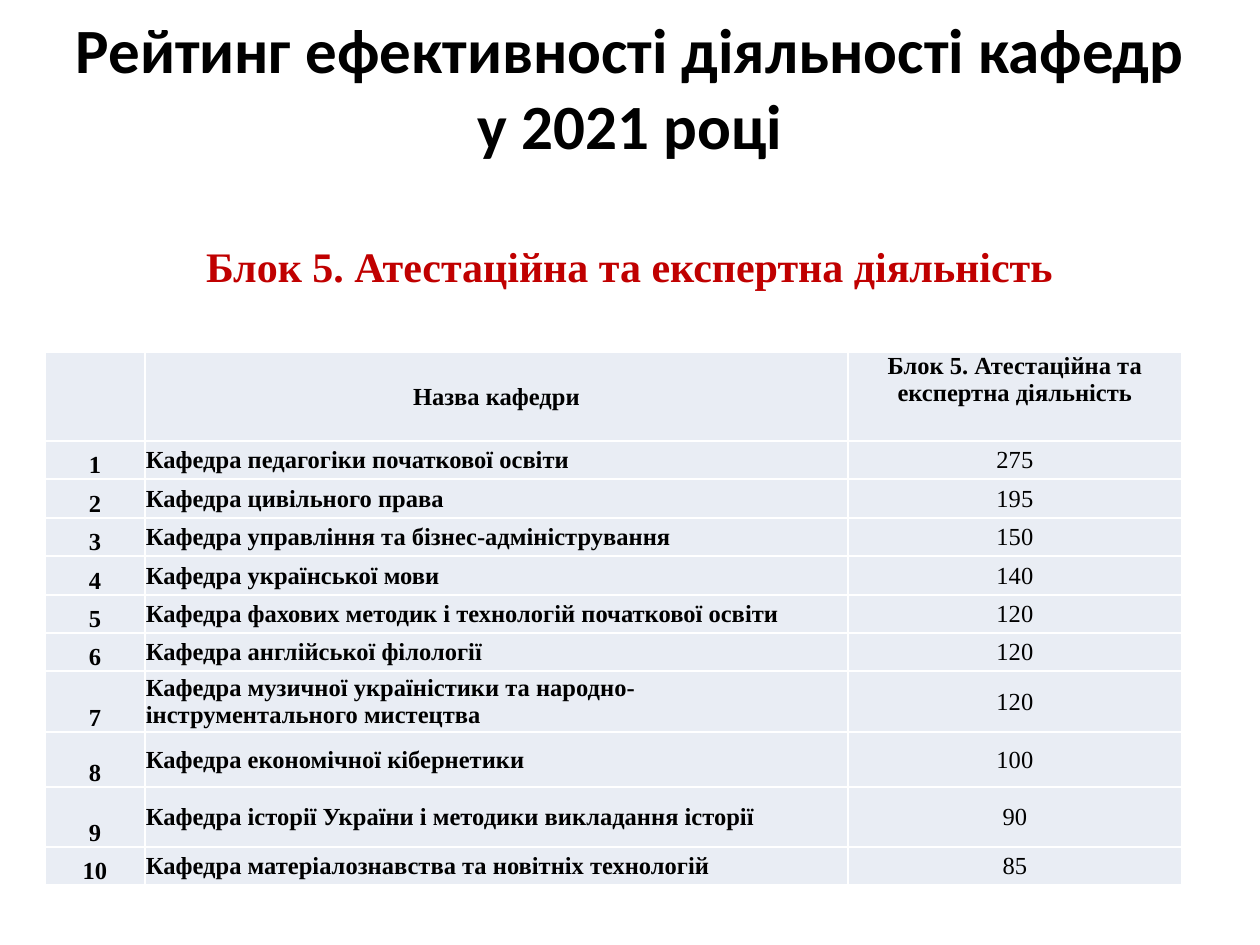
import pptx
import pptx.util
import pptx.dml.color
import pptx.enum.text
import pptx.oxml
import pptx.oxml.ns

RGBColor = pptx.dml.color.RGBColor
ALIGN = pptx.enum.text.PP_ALIGN
ANCHOR = pptx.enum.text.MSO_ANCHOR

BLACK = RGBColor(0x00, 0x00, 0x00)
RED = RGBColor(0xC0, 0x00, 0x00)
CELL_FILL = RGBColor(0xE9, 0xED, 0xF4)
BORDER = RGBColor(0xFF, 0xFF, 0xFF)
SERIF = "Times New Roman"

# Content
TITLE = "Рейтинг ефективності діяльності кафедр у 2021 році"
BLOCK = "Блок 5. Атестаційна та експертна діяльність"
HEADER = ("", "Назва кафедри", BLOCK)
DEPARTMENTS = [
    ("Кафедра педагогіки початкової освіти", 275),
    ("Кафедра цивільного права", 195),
    ("Кафедра управління та бізнес-адміністрування", 150),
    ("Кафедра української мови", 140),
    ("Кафедра фахових методик і технологій початкової освіти", 120),
    ("Кафедра англійської філології", 120),
    ("Кафедра музичної україністики та народно-інструментального мистецтва", 120),
    ("Кафедра економічної кібернетики", 100),
    ("Кафедра історії України і методики викладання історії", 90),
    ("Кафедра матеріалознавства та новітніх технологій", 85),
]

# Layout in px, 126 px to the inch
COL_WIDTHS = (100, 703, 334)
ROW_HEIGHTS = (89, 38, 39, 38, 39, 38, 38, 61, 55, 60, 38)
# Alignment, anchor and bold of each column
HEADER_STYLES = [(ALIGN.CENTER, ANCHOR.MIDDLE, True),
                 (ALIGN.CENTER, ANCHOR.MIDDLE, True),
                 (ALIGN.CENTER, ANCHOR.TOP, True)]
BODY_STYLES = [(ALIGN.CENTER, ANCHOR.BOTTOM, True),
               (ALIGN.LEFT, ANCHOR.MIDDLE, True),
               (ALIGN.CENTER, ANCHOR.MIDDLE, False)]


def px(n):
    return pptx.util.Emu(round(n * 914400 / 126))


def write(tf, text, align, size, font, color, bold):
    p = tf.paragraphs[0]
    p.alignment = align
    r = p.add_run()
    r.text = text
    r.font.size = pptx.util.Pt(size)
    r.font.name = font
    r.font.bold = bold
    r.font.color.rgb = color


def add_text(slide, box, text, size, font, color, wrap):
    tf = slide.shapes.add_textbox(*map(px, box)).text_frame
    tf.word_wrap = wrap
    write(tf, text, ALIGN.CENTER, size, font, color, True)
    return tf


def add_borders(cell):
    tcPr = cell._tc.get_or_add_tcPr()
    for i, side in enumerate("LRTB"):
        tcPr.insert(i, pptx.oxml.parse_xml(
            f'<a:ln{side} {pptx.oxml.ns.nsdecls("a")} w="12700"><a:solidFill>'
            f'<a:srgbClr val="{BORDER}"/></a:solidFill></a:ln{side}>'))


def fill_cell(cell, text, style):
    align, anchor, bold = style
    cell.fill.solid()
    cell.fill.fore_color.rgb = CELL_FILL
    add_borders(cell)
    cell.margin_left = cell.margin_right = cell.margin_top = px(1)
    cell.margin_bottom = 0
    cell.vertical_anchor = anchor
    if text:
        write(cell.text_frame, text, align, 14, SERIF, BLACK, bold)


def main():
    prs = pptx.Presentation()
    prs.slide_width, prs.slide_height = px(1260), px(945)
    slide = prs.slides.add_slide(prs.slide_layouts[6])

    # Title and block heading
    tf = add_text(slide, (63, 38, 1134, 97), TITLE, 36, "Calibri", BLACK, True)
    tf.vertical_anchor = ANCHOR.MIDDLE
    tf = add_text(slide, (189, 234, 881, 63), BLOCK, 24, SERIF, RED, False)
    tf.auto_size = pptx.enum.text.MSO_AUTO_SIZE.SHAPE_TO_FIT_TEXT

    # Rating table
    rows = [HEADER] + [(str(n), name, str(score))
                       for n, (name, score) in enumerate(DEPARTMENTS, 1)]
    table = slide.shapes.add_table(
        len(rows), len(COL_WIDTHS), px(45), px(352),
        px(sum(COL_WIDTHS)), px(sum(ROW_HEIGHTS))).table
    for col, width in zip(table.columns, COL_WIDTHS):
        col.width = px(width)
    for i, (row, height) in enumerate(zip(rows, ROW_HEIGHTS)):
        table.rows[i].height = px(height)
        styles = BODY_STYLES if i else HEADER_STYLES
        for j, (text, style) in enumerate(zip(row, styles)):
            fill_cell(table.cell(i, j), text, style)

    prs.save("out.pptx")


if __name__ == "__main__":
    main()
